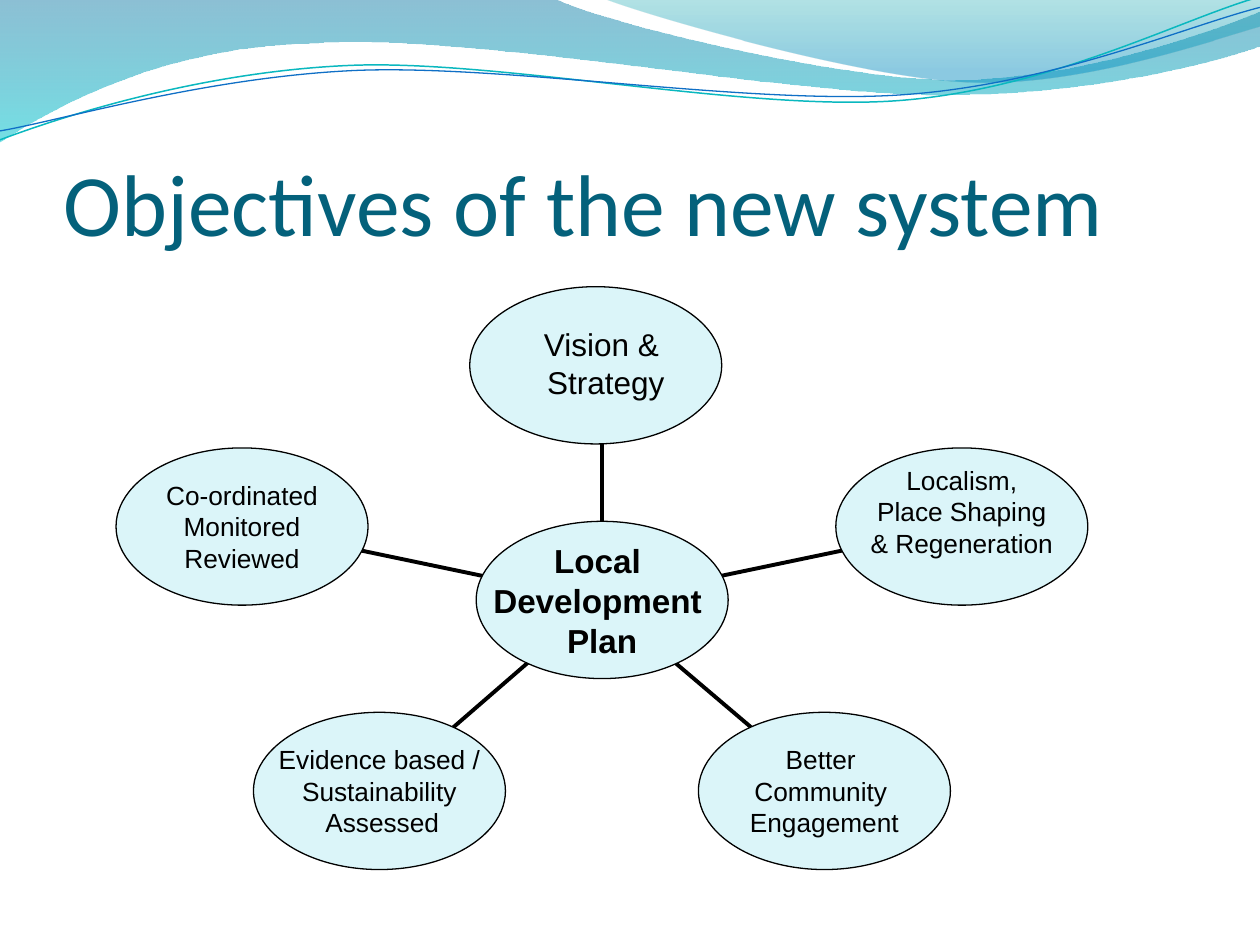
from typing import NamedTuple

from lxml.etree import SubElement
from pptx import Presentation
from pptx.dml.color import RGBColor
from pptx.enum.shapes import MSO_CONNECTOR as Link, MSO_SHAPE as Preset
from pptx.enum.text import MSO_ANCHOR as Anchor, PP_ALIGN as Align
from pptx.oxml.ns import qn
from pptx.util import Cm, Pt

BLACK, PALE, TEAL = "000000", "DBF5F9", "04617B"
OVAL_WIDTH, OVAL_HEIGHT = Cm(5.08), Cm(3.17)


class Stop(NamedTuple):
    position: float
    colour: str
    opacity: int


class Wave(NamedTuple):
    start: tuple
    segments: list
    stops: tuple = ()
    line: str = ""
    weight: float = 0


class Oval(NamedTuple):
    left: float
    top: float
    lines: tuple = ()
    size: int = 15
    bold: bool = False
    bottom_inset: float = 0


class Spoke(NamedTuple):
    start: tuple
    end: tuple


WAVES = [
    Wave((0, 0), [
        ((11.18, -0.03),),
        ((12.09, 0.43), (16.87, 1.6), (19.25, 1.6)),
        ((21.67, 1.6), (24.33, 0.66), (25.4, 0.23)),
        ((25.43, 0.91),),
        ((24.97, 1.12), (22.1, 1.93), (18.95, 1.91)),
        ((15.8, 1.91), (9.7, 0.71), (6.53, 0.86)),
        ((3.28, 0.91), (1.17, 2.11), (-0.03, 2.87)),
        ((0, 0),),
    ], stops=(Stop(0, "0074A1", 45), Stop(1, "00C6CF", 55))),
    Wave((12.17, -0.03), [
        ((12.93, 0.28), (17.32, 1.57), (19.53, 1.65)),
        ((21.74, 1.75), (24.41, 0.81), (25.4, 0.53)),
        ((25.4, 0),),
        ((12.17, -0.03),),
    ], stops=(Stop(0, "00A1A9", 30), Stop(0.8, "008BBF", 45))),
    Wave((0, 2.82), [
        ((1.22, 2.36), (4.01, 1.45), (7.04, 1.32)),
        ((10.03, 1.19), (15.06, 2.26), (18.11, 2.03)),
        ((21.16, 1.8), (23.83, 0.38), (25.35, -0.05)),
    ], line="0AB8BF", weight=0.85),
    Wave((0, 2.64), [
        ((1.19, 2.44), (4.17, 1.55), (7.19, 1.42)),
        ((10.24, 1.3), (15.16, 2.13), (18.21, 1.91)),
        ((21.23, 1.7), (23.9, 0.53), (25.4, 0.15)),
    ], line="0F6FC6", weight=0.75),
]

HUB = Oval(9.6, 10.51, ("Local ", "Development ", "Plan"), 19, True)
VISION_SPOKE = Spoke((12.14, 10.51), (12.14, 8.92))
SPOKES = [
    Spoke((9.73, 11.61), (7.29, 11.1)),
    Spoke((10.64, 13.36), (9.14, 14.66)),
    Spoke((13.61, 13.36), (15.14, 14.66)),
    Spoke((14.53, 11.61), (16.97, 11.1)),
]
OBJECTIVES = [
    Oval(2.34, 9.03, ("Co-ordinated", "Monitored", "Reviewed")),
    Oval(5.11, 14.36, ("Evidence based /", "Sustainability", " Assessed")),
    Oval(14.08, 14.36, ("Better ", "Community ", "Engagement")),
    Oval(16.85, 9.03, ("Localism,", "Place Shaping", "& Regeneration"), bottom_inset=0.61),
    Oval(9.47, 5.78),
]


def rgb(colour: str) -> RGBColor:
    return RGBColor.from_string(colour)


def set_line(line, colour: str, weight: float) -> None:
    line.color.rgb = rgb(colour)
    line.width = Pt(weight)


def write(frame, lines: tuple, size: int, colour: str, font: str, align, bold: bool = False) -> None:
    for index, line in enumerate(lines):
        paragraph = frame.add_paragraph() if index else frame.paragraphs[0]
        paragraph.text = line
        paragraph.alignment = align
        paragraph.font.name, paragraph.font.size = font, Pt(size)
        paragraph.font.bold = bold
        paragraph.font.color.rgb = rgb(colour)


def bend(outline, segments: list) -> None:
    legs = iter(outline.findall(qn("a:lnTo")))
    for segment in segments:
        first, *others = [next(legs) for _ in segment]
        if others:
            first.tag = qn("a:cubicBezTo")
            for leg in others:
                first.append(leg[0])
                outline.remove(leg)


def draw_wave(shapes, wave: Wave) -> None:
    builder = shapes.build_freeform(*map(Cm, wave.start))
    points = [(Cm(x), Cm(y)) for segment in wave.segments for x, y in segment]
    builder.add_line_segments(points, close=bool(wave.stops))
    band = builder.convert_to_shape()
    bend(next(band._element.iter(qn("a:path"))), wave.segments)
    band.shadow.inherit = False
    if not wave.stops:
        band.fill.background()
        set_line(band.line, wave.line, wave.weight)
        return
    band.line.fill.background()
    band.fill.gradient()
    band.fill.gradient_angle = 270
    for target, stop in zip(band.fill.gradient_stops, wave.stops):
        target.position = stop.position
        target.color.rgb = rgb(stop.colour)
    for colour, stop in zip(band._element.iter(qn("a:srgbClr")), wave.stops):
        SubElement(colour, qn("a:alpha"), val=str(stop.opacity * 1000))


def draw_oval(shapes, oval: Oval):
    ellipse = shapes.add_shape(Preset.OVAL, Cm(oval.left), Cm(oval.top), OVAL_WIDTH, OVAL_HEIGHT)
    ellipse.shadow.inherit = False
    ellipse.fill.solid()
    ellipse.fill.fore_color.rgb = rgb(PALE)
    set_line(ellipse.line, BLACK, 0.75)
    frame = ellipse.text_frame
    frame.word_wrap = False
    frame.vertical_anchor = Anchor.MIDDLE
    frame.margin_left = frame.margin_right = frame.margin_top = 0
    frame.margin_bottom = Cm(oval.bottom_inset)
    write(frame, oval.lines, oval.size, BLACK, "Arial", Align.CENTER, oval.bold)
    return ellipse


def draw_spoke(shapes, spoke: Spoke):
    link = shapes.add_connector(Link.STRAIGHT, *map(Cm, spoke.start + spoke.end))
    set_line(link.line, BLACK, 2.25)
    SubElement(link._element.spPr, qn("a:effectLst"))
    return link


def main() -> None:
    """Build the slide with the objectives set around the Local Development Plan."""
    deck = Presentation()
    deck.slide_width, deck.slide_height = Cm(25.4), Cm(19.05)
    shapes = deck.slides.add_slide(deck.slide_layouts[6]).shapes

    for wave in WAVES:
        draw_wave(shapes, wave)

    title = shapes.add_textbox(Cm(1.28), Cm(1.95), Cm(22.86), Cm(3.17)).text_frame
    title.word_wrap = True
    title.vertical_anchor = Anchor.BOTTOM
    title.margin_left = title.margin_right = title.margin_bottom = 0
    write(title, ("Objectives of the new system",), 50, TEAL, "Calibri", Align.LEFT)

    for spoke in SPOKES:
        draw_spoke(shapes, spoke)
    hub = draw_oval(shapes, HUB)
    draw_spoke(shapes, VISION_SPOKE).begin_connect(hub, 0)
    for objective in OBJECTIVES:
        draw_oval(shapes, objective)

    vision = shapes.add_textbox(Cm(7.53), Cm(6.43), Cm(9.19), Cm(1.8)).text_frame
    vision.word_wrap = True
    write(vision, ("Vision &", " Strategy"), 18, BLACK, "Arial", Align.CENTER)

    deck.save("out.pptx")


if __name__ == "__main__":
    main()
